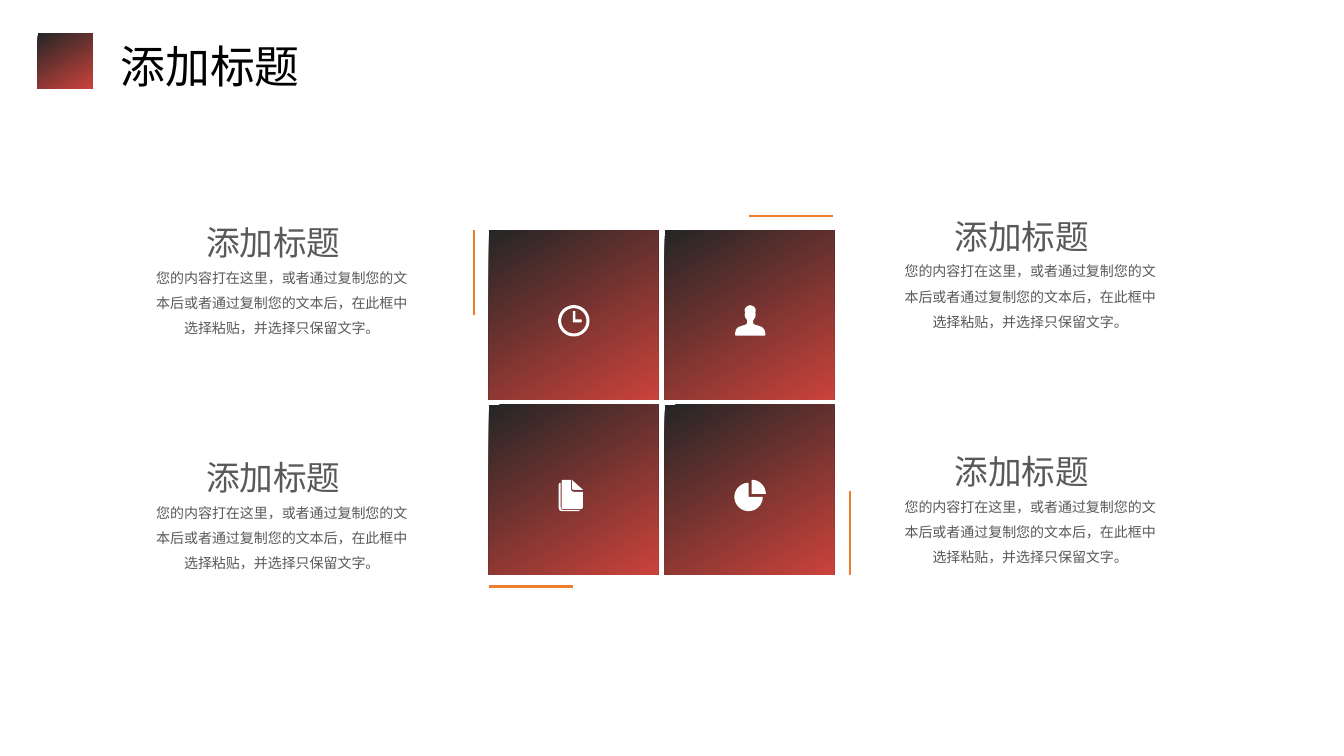
from dataclasses import dataclass
from math import cos, radians, sin

from lxml import etree
from pptx import Presentation
from pptx import util as u
from pptx.dml.color import RGBColor
from pptx.enum import shapes, text
from pptx.oxml import ns
from pptx.util import Cm


@dataclass(frozen=True)
class Theme:
    font: str = "Noto Sans CJK SC"
    dark: RGBColor = RGBColor(0x26, 0x26, 0x26)
    red: RGBColor = RGBColor(0xC9, 0x42, 0x3B)
    accent: RGBColor = RGBColor(0xED, 0x7D, 0x31)
    white: RGBColor = RGBColor(0xFF, 0xFF, 0xFF)
    black: RGBColor = RGBColor(0, 0, 0)
    grey: RGBColor = RGBColor(0x59, 0x59, 0x59)
    title_size: int = 32
    heading_size: int = 24
    body_size: int = 10
    line_width: float = 1.5


THEME = Theme()

HEADING = "添加标题"
BODY = ("您的内容打在这里，或者通过复制您的文本后或者通过复制您的文本后，"
        "在此框中选择粘贴，并选择只保留文字。")

# Tile grid, in centimetres
GRID_LEFT, GRID_TOP = 12.32, 5.8
TILE, PITCH_X, PITCH_Y = 4.27, 4.43, 4.4

# Icons are drawn on a grid of 31 units
ICON_UNIT = Cm(0.79) / 31


def arc(center_x, center_y, radius, start, end):
    """Points along an arc, clockwise from start to end in degrees."""
    return [(center_x + radius * cos(radians(angle)),
             center_y + radius * sin(radians(angle)))
            for angle in range(start, end + 1, 6)]


# Icon outlines
CLOCK = [
    arc(15, 15.5, 15.5, 0, 360),
    arc(15, 15.5, 12.5, 0, 360),
    [(14, 6), (16.5, 6), (16.5, 14), (22.5, 14), (23, 15.5), (22.5, 17), (14, 17)],
]
PERSON_RIGHT = [
    (15.5, 0), (18.5, 1), (20.5, 3), (21, 5), (20.5, 8), (21, 9), (20.5, 12),
    (19, 14), (18.5, 15), (18.5, 18), (20, 19.2), (24, 20.5), (27, 21.5),
    (29.5, 24), (30.5, 28), (30.5, 29.5), (29.8, 30),
]
PERSON = [PERSON_RIGHT + [(31 - x, y) for x, y in reversed(PERSON_RIGHT)]]
DOCUMENTS = [
    [(4, 0), (12, 0), (12, 9), (13, 11.3), (15, 12), (24, 12), (24, 27),
     (23.4, 28.5), (22, 29), (4, 29), (3, 28), (3, 1)],
    [(13, 0), (24, 10), (15, 10), (13.5, 9.5), (13, 9)],
    [(2, 3), (2, 27), (2.5, 29), (4, 30), (21, 30), (20, 31), (3, 31),
     (0.8, 30.2), (0, 28), (0, 5), (0.5, 3.5)],
]
PIE = [
    [(17, 14)] + arc(17, 14, 14, -90, 0),
    [(14, 17)] + arc(14, 17, 14, 0, 270),
]


def add_tile(slide, left, top, size):
    tile = slide.shapes.add_shape(
        shapes.MSO_SHAPE.RECTANGLE, Cm(left), Cm(top), Cm(size), Cm(size))
    tile.shadow.inherit = False
    tile.line.fill.background()
    tile.fill.gradient()
    tile.fill.gradient_angle = 300
    ends = ((0.01, THEME.dark), (0.99, THEME.red))
    for stop, (position, color) in zip(tile.fill.gradient_stops, ends):
        stop.position = position
        stop.color.rgb = color


def add_icon(slide, left, top, outlines):
    def place(point):
        return (Cm(left) + point[0] * ICON_UNIT, Cm(top) + point[1] * ICON_UNIT)

    builder = None
    for outline in outlines:
        start, *rest = map(place, outline)
        if builder is None:
            builder = slide.shapes.build_freeform(*start)
        else:
            builder.move_to(*start)
        builder.add_line_segments(rest, close=True)
    icon = builder.convert_to_shape()
    icon.shadow.inherit = False
    icon.fill.solid()
    icon.fill.fore_color.rgb = THEME.white
    icon.line.fill.background()


def add_accent(slide, left, top, width, height):
    accent = slide.shapes.add_connector(
        shapes.MSO_CONNECTOR.STRAIGHT,
        Cm(left), Cm(top), Cm(left + width), Cm(top + height))
    accent.line.color.rgb = THEME.accent
    accent.line.width = u.Pt(THEME.line_width)
    etree.SubElement(accent._element.spPr, ns.qn("a:effectLst"))


def add_text(slide, box, wording, size, color, align, spacing=1.0, inset=(0, 0)):
    frame = slide.shapes.add_textbox(*map(Cm, box)).text_frame
    frame.word_wrap = True
    frame.margin_left = frame.margin_right = Cm(inset[0])
    frame.margin_top = frame.margin_bottom = Cm(inset[1])
    paragraph = frame.paragraphs[0]
    paragraph.text = wording
    paragraph.alignment = align
    paragraph.line_spacing = spacing
    font = paragraph.font
    font.name = THEME.font
    font.size = u.Pt(size)
    font.color.rgb = color
    # East Asian typeface
    east_asian = etree.SubElement(font._element, ns.qn("a:ea"))
    east_asian.set("typeface", THEME.font)


def add_caption(slide, left, top):
    center = text.PP_ALIGN.CENTER
    add_text(slide, (left + 0.39, top, 5.18, 1.02), HEADING,
             THEME.heading_size, THEME.grey, center)
    add_text(slide, (left, top + 0.98, 6.38, 1.85), BODY,
             THEME.body_size, THEME.grey, center, spacing=1.5)


def main():
    deck = Presentation()
    deck.slide_width, deck.slide_height = Cm(33.87), Cm(19.05)
    slide = deck.slides.add_slide(deck.slide_layouts[6])

    # Four tiles with their icons
    icons = (CLOCK, PERSON, DOCUMENTS, PIE)
    for index, outlines in enumerate(icons):
        row, column = divmod(index, 2)
        left, top = GRID_LEFT + column * PITCH_X, GRID_TOP + row * PITCH_Y
        add_tile(slide, left, top, TILE)
        add_icon(slide, left + 1.76, top + 1.89, outlines)

    # Accent lines around the grid
    for accent in ((18.87, 5.44, 2.13, 0), (12.32, 14.78, 2.13, 0),
                   (21.41, 12.37, 0, 2.13), (11.94, 5.8, 0, 2.13)):
        add_accent(slide, *accent)

    # Captions on both sides
    for left, first_top in ((3.91, 5.59), (22.77, 5.43)):
        for row in range(2):
            add_caption(slide, left, first_top + row * 5.93)

    # Slide title
    add_tile(slide, 0.95, 0.84, 1.38)
    add_text(slide, (2.79, 0.84, 5.92, 1.62), HEADING, THEME.title_size,
             THEME.black, text.PP_ALIGN.LEFT, inset=(0.25, 0.13))

    deck.save("out.pptx")


if __name__ == "__main__":
    main()
